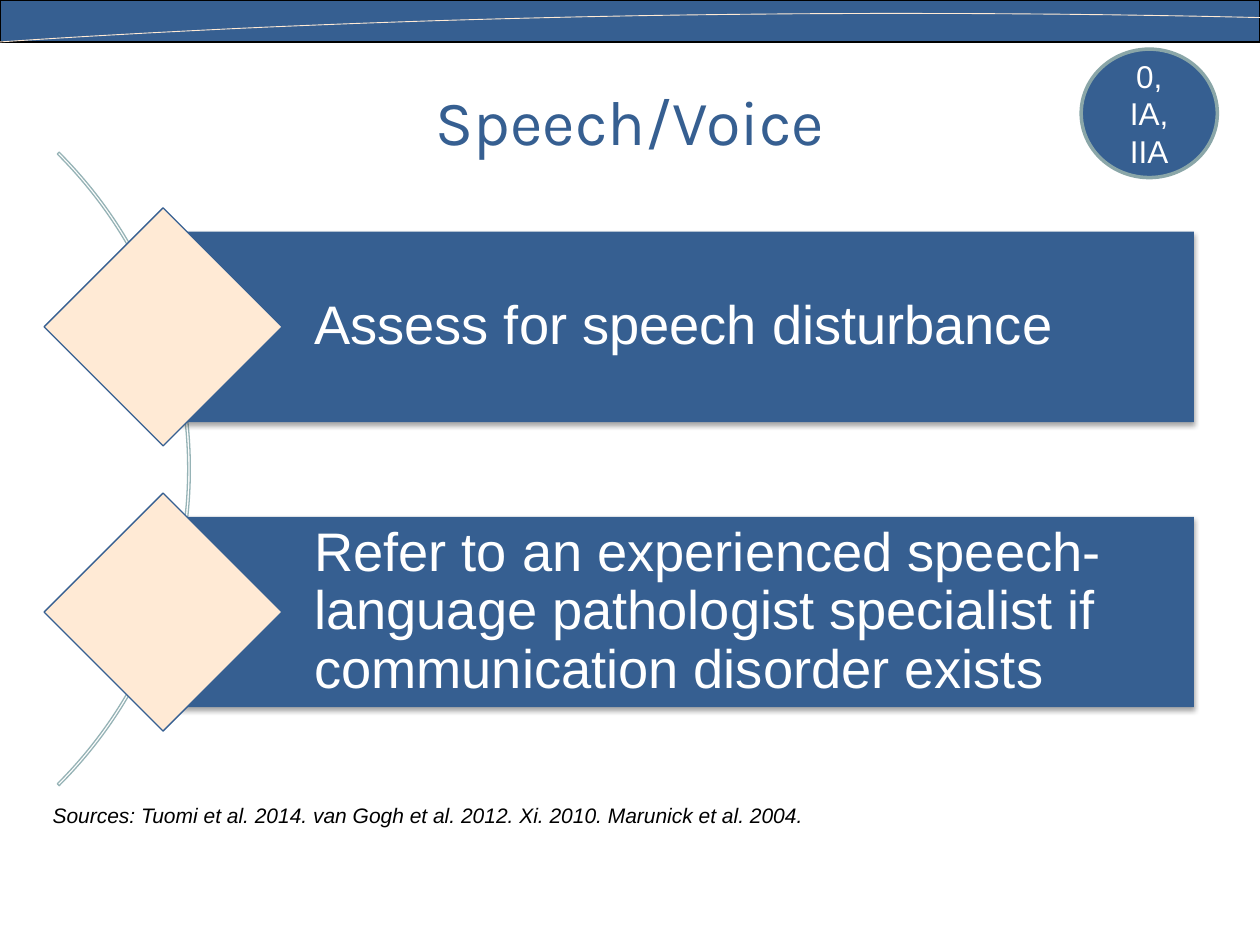
import pptx
import pptx.util
import pptx.oxml
import pptx.dml.color
import pptx.enum.shapes
import pptx.enum.text

Pt = pptx.util.Pt
RGBColor = pptx.dml.color.RGBColor
SHAPE = pptx.enum.shapes.MSO_SHAPE
ALIGN = pptx.enum.text.PP_ALIGN
ANCHOR = pptx.enum.text.MSO_ANCHOR

BLUE = RGBColor(0x36, 0x5F, 0x91)
CREAM = RGBColor(0xFF, 0xEA, 0xD5)
TEAL = RGBColor(0x96, 0xB3, 0xB6)
SAGE = RGBColor(0x8A, 0xA6, 0xA8)
BLACK = RGBColor(0, 0, 0)
WHITE = RGBColor(0xFF, 0xFF, 0xFF)

SHADOW = (
    '<a:effectLst xmlns:a="http://schemas.openxmlformats.org/drawingml/2006/main">'
    '<a:outerShdw blurRad="39370" dist="22860" dir="5400000" rotWithShape="0">'
    '<a:srgbClr val="000000"><a:alpha val="35000"/></a:srgbClr>'
    '</a:outerShdw></a:effectLst>'
)


def paint(shape, fill=None, line=None, weight=0.75):
    shape.shadow.inherit = False
    if fill is None:
        shape.fill.background()
    else:
        shape.fill.solid()
        shape.fill.fore_color.rgb = fill
    if line is None:
        shape.line.fill.background()
    else:
        shape.line.color.rgb = line
        shape.line.width = Pt(weight)


def add_shape(page, kind, left, top, width, height, **style):
    shape = page.shapes.add_shape(kind, Pt(left), Pt(top), Pt(width), Pt(height))
    paint(shape, **style)
    return shape


def add_box(page, left, top, width, height):
    return page.shapes.add_textbox(Pt(left), Pt(top), Pt(width), Pt(height))


def write(shape, text, size, color, font="Arial", align=ALIGN.LEFT,
          anchor=ANCHOR.MIDDLE, italic=False):
    frame = shape.text_frame
    frame.word_wrap = True
    frame.vertical_anchor = anchor
    para = frame.paragraphs[0]
    para.alignment = align
    span = para.add_run()
    span.text = text
    span.font.name = font
    span.font.size = Pt(size)
    span.font.color.rgb = color
    span.font.italic = italic
    return para


def add_header(page, left, top, width, height):
    add_shape(page, SHAPE.RECTANGLE, left, top, width, height, fill=BLUE, line=BLACK)
    controls = [(1, 0.42), (0.744, 0.24), (0.379, 0.24), (0, 1)]
    steps = 48
    points = []
    for step in range(steps + 1):
        t = step / steps
        weights = [(1 - t) ** 3, 3 * t * (1 - t) ** 2, 3 * t * t * (1 - t), t ** 3]
        x = sum(w * c[0] for w, c in zip(weights, controls))
        y = sum(w * c[1] for w, c in zip(weights, controls))
        points.append((Pt(left + width * x), Pt(top + height * y)))
    builder = page.shapes.build_freeform(*points[0])
    builder.add_line_segments(points[1:], close=False)
    paint(builder.convert_to_shape(), line=CREAM, weight=0.5)


def add_title(page, left, top, width, height):
    box = add_box(page, left, top, width, height)
    write(box, "Speech/Voice", 36, BLUE, font="Karla", align=ALIGN.CENTER)


def add_step(page, left, top, size, bar_width, text):
    bar_height = size * 0.8
    bar = add_shape(page, SHAPE.RECTANGLE, left + size / 2, top + size * 0.1,
                    bar_width, bar_height, fill=BLUE)
    properties = bar.fill._xPr
    properties.remove(properties.find(pptx.oxml.ns.qn("a:effectLst")))
    properties.append(pptx.oxml.parse_xml(SHADOW))
    frame = bar.text_frame
    frame.margin_left = Pt(86.4)
    frame.margin_top = frame.margin_right = frame.margin_bottom = Pt(6.2)
    write(bar, text, 31, WHITE).line_spacing = 0.9
    add_shape(page, SHAPE.DIAMOND, left, top, size, size, fill=CREAM, line=BLUE)


def add_steps(page, left, top, texts):
    size, pitch, bar_width = 136, 163, 589
    diameter = 512
    arc = add_shape(page, SHAPE.BLOCK_ARC, left - 428.4, top - 106.8,
                    diameter, diameter, line=TEAL)
    for index, value in enumerate((189, 27, 0.003)):
        arc.adjustments[index] = value
    for index, text in enumerate(texts):
        add_step(page, left, top + index * pitch, size, bar_width, text)


def add_badge(page, left, top, width, height):
    badge = add_shape(page, SHAPE.OVAL, left, top, width, height,
                      fill=BLUE, line=SAGE, weight=2)
    write(badge, "0, IA, IIA", 18, WHITE, align=ALIGN.CENTER)


def add_sources(page, left, top, width, height):
    box = add_box(page, left, top, width, height)
    para = write(
        box,
        "Sources: Tuomi et al. 2014. van Gogh et al. 2012. Xi. 2010. Marunick et al. 2004.",
        12, BLACK, anchor=ANCHOR.TOP, italic=True)
    para.space_after = Pt(6)


def main():
    deck = pptx.Presentation()
    deck.slide_width, deck.slide_height = Pt(720), Pt(540)
    page = deck.slides.add_slide(deck.slide_layouts[6])
    add_header(page, 0, 0, 720, 24)
    add_title(page, 36, 24, 648, 90)
    add_steps(page, 25.2, 118.8, [
        "Assess for speech disturbance",
        "Refer to an experienced speech-language pathologist specialist "
        "if communication disorder exists",
    ])
    add_badge(page, 617.8, 28.1, 77.8, 73.4)
    add_sources(page, 23, 455, 684, 21.6)
    deck.save("out.pptx")


if __name__ == "__main__":
    main()
